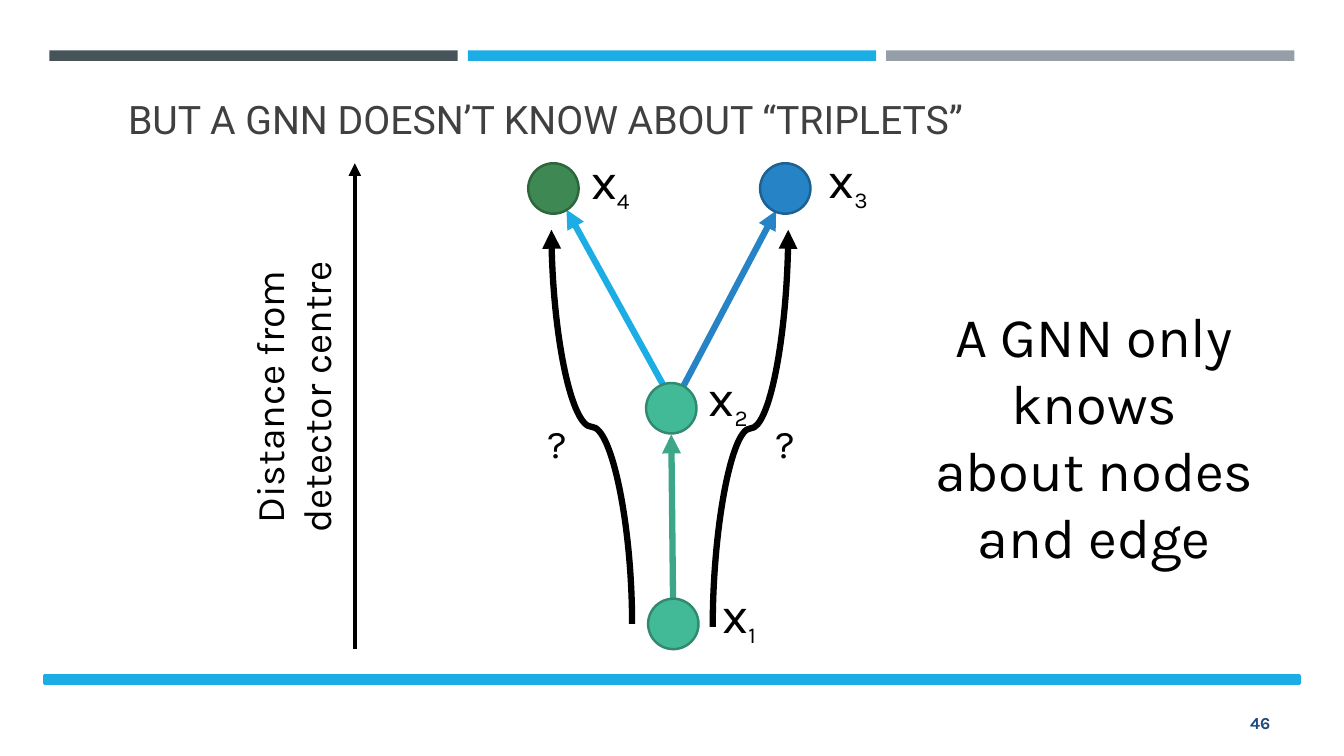
import pptx
import pptx.util
import pptx.dml.color
import pptx.enum.shapes
import pptx.enum.text
import pptx.oxml
import pptx.oxml.ns

SLIDE_W, SLIDE_H = pptx.util.Inches(13.333), pptx.util.Inches(7.5)
SHAPE = pptx.enum.shapes.MSO_SHAPE
CONNECTOR = pptx.enum.shapes.MSO_CONNECTOR
ALIGN = pptx.enum.text.PP_ALIGN
ANCHOR = pptx.enum.text.MSO_ANCHOR

COLORS = {
    "slate": "465359", "sky": "1CADE4", "grey": "969FA7",
    "blue": "2683C6", "blue_rim": "1C6192",
    "green": "3E8853", "green_rim": "2E653D",
    "teal": "42BA97", "teal_rim": "318A70", "teal_edge": "3BA788",
    "title": "404040", "number": "1F497D", "black": "000000",
}

# Positions are percentages of the slide's width and height.
NODE_SIZE = (3.75, 6.67)
LABEL_SIZE = (9.38, 9.47)
NODES = [  # index, node centre, label centre, fill, rim
    ("1", (50.1, 82.53), (55.01, 81.27), "teal", "teal_rim"),
    ("2", (49.95, 54), (54.19, 52.47), "teal", "teal_rim"),
    ("3", (58.43, 24.93), (63.11, 23.67), "blue", "blue_rim"),
    ("4", (41.18, 24.93), (45.41, 23.8), "green", "green_rim"),
]
EDGES = [
    ((50.18, 53.6), (42.15, 27.73), "sky"),
    ((50.18, 53.33), (57.75, 27.87), "blue"),
    ((50.1, 82.53), (49.95, 57.47), "teal_edge"),
]
TRIPLETS = [
    ((47.03, 82.53), (41.03, 30.4)),
    ((53.03, 82.93), (58.65, 30.4)),
]


def rgb(name):
    return pptx.dml.color.RGBColor.from_string(COLORS[name])


def px(share):
    return round(SLIDE_W * share / 100)


def py(share):
    return round(SLIDE_H * share / 100)


def box(x, y, w, h):
    return px(x), py(y), px(w), py(h)


def centred(centre, size):
    return centre[0] - size[0] / 2, centre[1] - size[1] / 2, *size


def write(tf, paragraphs, size=28, font="Karla", color="black", bold=False,
          align=ALIGN.CENTER, anchor=ANCHOR.TOP, subscript=None):
    """Fill a text frame; subscript is added to the end of each paragraph."""
    tf.word_wrap = True
    tf.auto_size = pptx.enum.text.MSO_AUTO_SIZE.NONE
    tf.vertical_anchor = anchor
    for i, text in enumerate(paragraphs):
        p = tf.add_paragraph() if i else tf.paragraphs[0]
        p.alignment = align
        pieces = [(text, size)] + ([(subscript, 28)] if subscript else [])
        for j, (piece, points) in enumerate(pieces):
            r = p.add_run()
            r.text = piece
            r.font.name, r.font.size = font, pptx.util.Pt(points)
            r.font.bold = bold
            r.font.color.rgb = rgb(color)
            if j:
                r.font._element.set("baseline", "-25000")


def add_text(s, at, *paragraphs, rotation=0, **fmt):
    sp = s.shapes.add_textbox(*box(*at))
    sp.rotation = rotation
    write(sp.text_frame, paragraphs, **fmt)


def add_filled(s, kind, at, fill, rim=None):
    sp = s.shapes.add_shape(kind, *box(*at))
    sp.shadow.inherit = False
    sp.fill.solid()
    sp.fill.fore_color.rgb = rgb(fill)
    if rim:
        sp.line.color.rgb = rgb(rim)
        sp.line.width = pptx.util.Pt(1.75)
    else:
        sp.line.fill.background()


def style_arrow(cxn, color, width):
    cxn.line.color.rgb = rgb(color)
    cxn.line.width = pptx.util.Pt(width)
    ns = pptx.oxml.ns.nsdecls("a")
    cxn.line._get_or_add_ln().append(
        pptx.oxml.parse_xml(f'<a:tailEnd {ns} type="triangle"/>'))
    cxn._element.spPr.append(pptx.oxml.parse_xml(f"<a:effectLst {ns}/>"))


def add_arrow(s, start, end, color, width=4.5):
    cxn = s.shapes.add_connector(CONNECTOR.STRAIGHT, px(start[0]), py(start[1]),
                                 px(end[0]), py(end[1]))
    style_arrow(cxn, color, width)


def add_rising_curve(s, start, end):
    """Draw an S curve that leaves and arrives vertically, by a quarter turn."""
    x1, y1, x2, y2 = px(start[0]), py(start[1]), px(end[0]), py(end[1])
    mid_x, mid_y = (x1 + x2) // 2, (y1 + y2) // 2
    half_w, half_h = (y1 - y2) // 2, (x2 - x1) // 2
    cxn = s.shapes.add_connector(CONNECTOR.CURVE, mid_x - half_w, mid_y - half_h,
                                 mid_x + half_w, mid_y + half_h)
    cxn._element.spPr.xfrm.set("rot", str(270 * 60000))
    style_arrow(cxn, "black", 4.5)


def add_title(s, text):
    title = s.shapes.title
    title.left, title.top, title.width, title.height = box(8.78, 0.13, 86.25, 19.33)
    write(title.text_frame, [text], font="Roboto", color="title",
          align=ALIGN.LEFT, anchor=ANCHOR.BOTTOM)


def add_frame(s):
    for i, color in enumerate(("slate", "sky", "grey")):
        add_filled(s, SHAPE.RECTANGLE, (3.68 + 31.13 * i, 6.67, 30.38, 1.4), color)
    add_filled(s, SHAPE.RECTANGLE, (3.3, 89.33, 93.38, 1.07), "sky", "sky")
    add_text(s, (86.63, 92.93, 8.63, 5.33), "46", size=12, color="number",
             bold=True, align=ALIGN.RIGHT, anchor=ANCHOR.MIDDLE)


def add_graph(s):
    for start, end, color in EDGES:
        add_arrow(s, start, end, color)
    for index, centre, label_centre, fill, rim in NODES:
        add_filled(s, SHAPE.OVAL, centred(centre, NODE_SIZE), fill, rim)
        add_text(s, centred(label_centre, LABEL_SIZE), "x", size=36, subscript=index)
    for start, end in TRIPLETS:
        add_rising_curve(s, start, end)
    for left in (36.75, 53.7):
        add_text(s, (left, 54.8, 9.38, 7.6), "?")


def main():
    prs = pptx.Presentation()
    prs.slide_width, prs.slide_height = SLIDE_W, SLIDE_H
    s = prs.slides.add_slide(prs.slide_layouts[5])
    add_frame(s)
    add_title(s, "BUT A GNN DOESN’T KNOW ABOUT “TRIPLETS”")
    add_graph(s)
    add_arrow(s, (26.4, 85.87), (26.4, 21.6), "black", width=3)
    add_text(s, (9.38, 45.6, 24.83, 13.87), "Distance from detector centre",
             rotation=270)
    add_text(s, (64.8, 39.2, 33.23, 28.27), "A GNN only knows", "about nodes",
             "and edge", size=40)
    prs.save("out.pptx")


if __name__ == "__main__":
    main()
